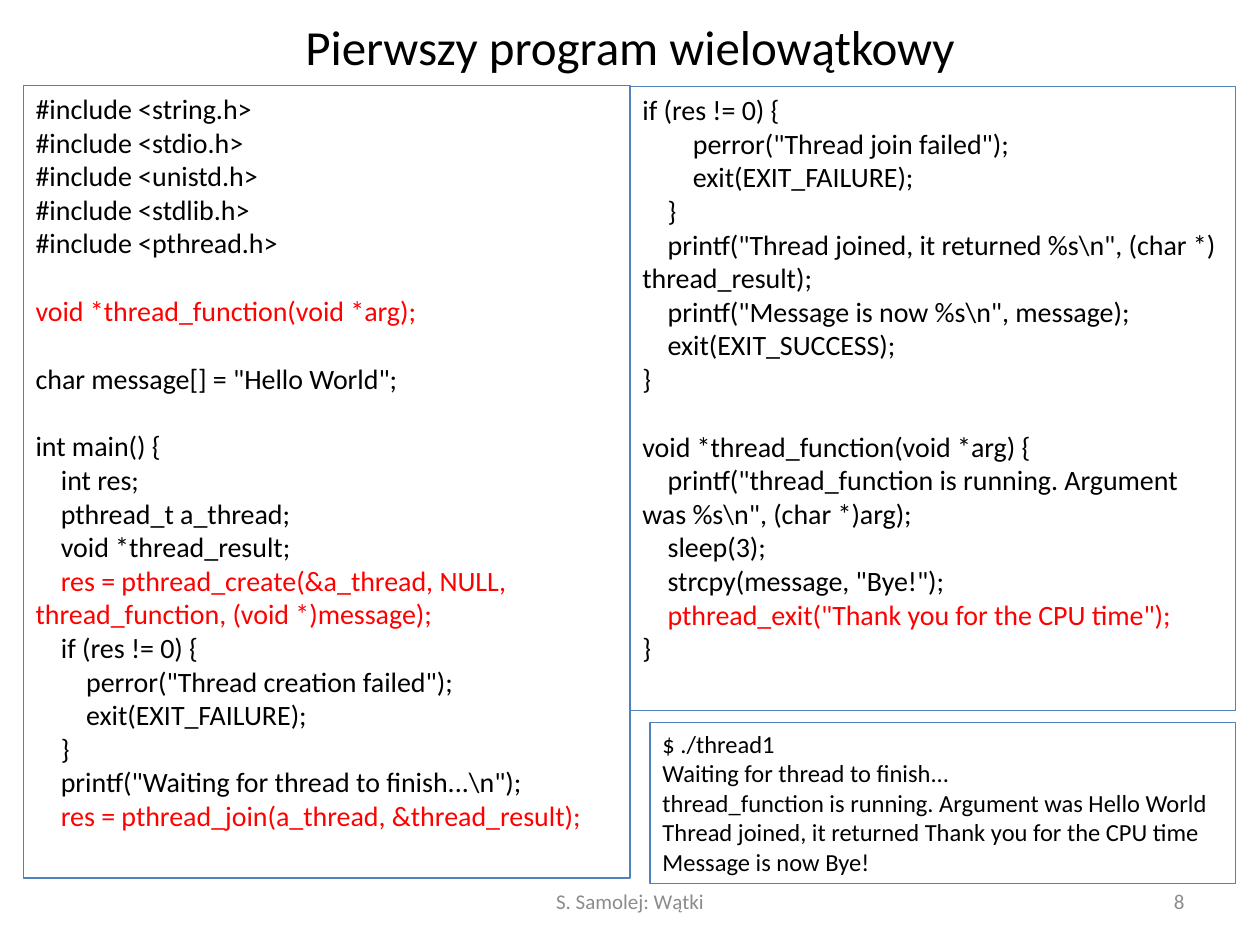
import pptx
import pptx.util
import pptx.dml.color
import pptx.enum.shapes
import pptx.enum.text
from dataclasses import dataclass

Pt = pptx.util.Pt
RGB = pptx.dml.color.RGBColor
Align = pptx.enum.text.PP_ALIGN
Anchor = pptx.enum.text.MSO_ANCHOR


@dataclass(frozen=True)
class Theme:
    font: str = "Calibri"
    text: RGB = RGB(0x00, 0x00, 0x00)
    accent: RGB = RGB(0xFF, 0x00, 0x00)
    muted: RGB = RGB(0x8C, 0x8C, 0x8C)
    border: RGB = RGB(0x4F, 0x81, 0xBD)
    title_size: float = 28
    code_size: float = 16
    output_size: float = 14
    footer_size: float = 12
    indent_step: float = 14.46  # four spaces of code
    blank_line: float = 19.5


theme = Theme()


def style_paragraph(para, size, color, align):
    para.alignment = align
    for span in para.runs:
        span.font.name = theme.font
        span.font.size = Pt(size)
        span.font.color.rgb = color


def add_listing(page, left, top, width, height, lines, size):
    """Bordered panel; each line is (blank lines before, indent level, text, color)."""
    box = page.shapes.add_shape(
        pptx.enum.shapes.MSO_SHAPE.RECTANGLE, Pt(left), Pt(top), Pt(width), Pt(height))
    box.shadow.inherit = False
    box.fill.background()
    box.line.color.rgb = theme.border
    box.line.width = Pt(0.75)
    frame = box.text_frame
    frame.word_wrap = True
    frame.vertical_anchor = Anchor.TOP
    frame.text = "\n".join(text for _, _, text, _ in lines)
    for para, (blanks, level, _, color) in zip(frame.paragraphs, lines):
        style_paragraph(para, size, color, Align.LEFT)
        para.space_before = Pt(blanks * theme.blank_line)
        # First-line indent only, so wrapped code returns to the margin
        para._p.get_or_add_pPr().set("indent", str(int(Pt(level * theme.indent_step))))


deck = pptx.Presentation()
deck.slide_width, deck.slide_height = Pt(720), Pt(540)
page = deck.slides.add_slide(deck.slide_layouts[5])

# Title
title = page.shapes.title
title.left, title.top, title.width, title.height = Pt(36.5), Pt(9.5), Pt(647), Pt(33)
title.text_frame.text = "Pierwszy program wielowątkowy"
title.text_frame.vertical_anchor = Anchor.MIDDLE
style_paragraph(title.text_frame.paragraphs[0], theme.title_size, theme.text, Align.CENTER)

# Footer and page number
for left, width, text, align in [
    (246, 228, "S. Samolej: Wątki", Align.CENTER),
    (516, 168, "8", Align.RIGHT),
]:
    box = page.shapes.add_textbox(Pt(left), Pt(500.5), Pt(width), Pt(28.75))
    box.text_frame.word_wrap = True
    box.text_frame.vertical_anchor = Anchor.MIDDLE
    box.text_frame.text = text
    style_paragraph(box.text_frame.paragraphs[0], theme.footer_size, theme.muted, align)

# Program, first part
program_start = [
    (0, 0, "#include <string.h>", theme.text),
    (0, 0, "#include <stdio.h>", theme.text),
    (0, 0, "#include <unistd.h>", theme.text),
    (0, 0, "#include <stdlib.h>", theme.text),
    (0, 0, "#include <pthread.h>", theme.text),
    (1, 0, "void *thread_function(void *arg);", theme.accent),
    (1, 0, 'char message[] = "Hello World";', theme.text),
    (1, 0, "int main() {", theme.text),
    (0, 1, "int res;", theme.text),
    (0, 1, "pthread_t a_thread;", theme.text),
    (0, 1, "void *thread_result;", theme.text),
    (0, 1, "res = pthread_create(&a_thread, NULL, thread_function, (void *)message);",
     theme.accent),
    (0, 1, "if (res != 0) {", theme.text),
    (0, 2, 'perror("Thread creation failed");', theme.text),
    (0, 2, "exit(EXIT_FAILURE);", theme.text),
    (0, 1, "}", theme.text),
    (0, 1, r'printf("Waiting for thread to finish...\n");', theme.text),
    (0, 1, "res = pthread_join(a_thread, &thread_result);", theme.accent),
]
add_listing(page, 13.25, 48.75, 346.75, 453, program_start, theme.code_size)

# Program, second part
program_end = [
    (0, 0, "if (res != 0) {", theme.text),
    (0, 2, 'perror("Thread join failed");', theme.text),
    (0, 2, "exit(EXIT_FAILURE);", theme.text),
    (0, 1, "}", theme.text),
    (0, 1, r'printf("Thread joined, it returned %s\n", (char *) thread_result);', theme.text),
    (0, 1, r'printf("Message is now %s\n", message);', theme.text),
    (0, 1, "exit(EXIT_SUCCESS);", theme.text),
    (0, 0, "}", theme.text),
    (1, 0, "void *thread_function(void *arg) {", theme.text),
    (0, 1, r'printf("thread_function is running. Argument was %s\n", (char *)arg);',
     theme.text),
    (0, 1, "sleep(3);", theme.text),
    (0, 1, 'strcpy(message, "Bye!");', theme.text),
    (0, 1, 'pthread_exit("Thank you for the CPU time");', theme.accent),
    (0, 0, "}", theme.text),
]
add_listing(page, 360, 49.5, 346, 356.5, program_end, theme.code_size)

# Program output
output = [(0, 0, text, theme.text) for text in [
    "$ ./thread1",
    "Waiting for thread to finish...",
    "thread_function is running. Argument was Hello World",
    "Thread joined, it returned Thank you for the CPU time",
    "Message is now Bye!",
]]
add_listing(page, 371.5, 413, 334.5, 92, output, theme.output_size)

deck.save("out.pptx")
